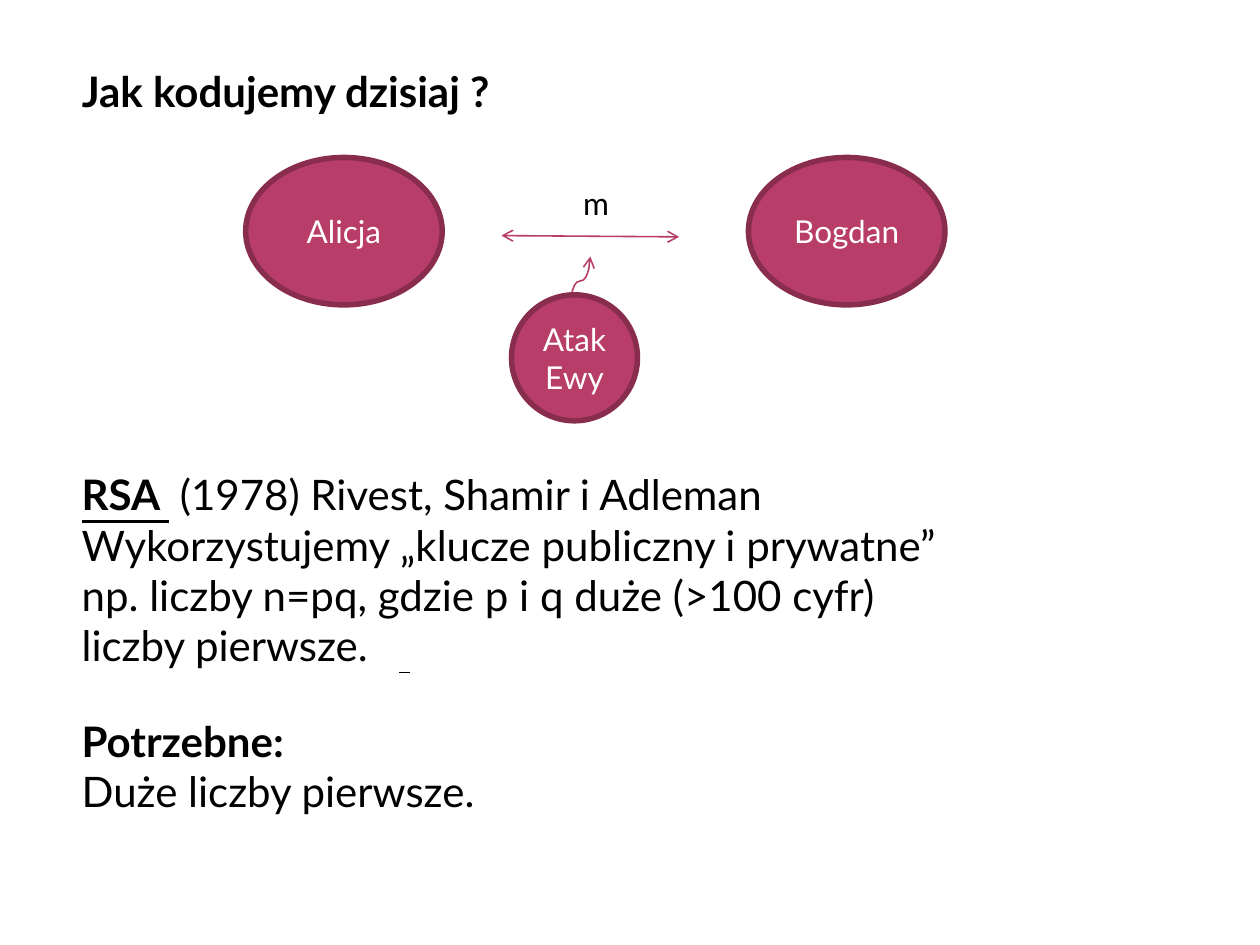
from lxml.etree import SubElement
from pptx import Presentation
from pptx.dml.color import RGBColor
from pptx.enum.shapes import MSO_CONNECTOR, MSO_SHAPE
from pptx.enum.text import MSO_ANCHOR, PP_ALIGN
from pptx.oxml.ns import qn
from pptx.util import Inches, Pt

FONT = "Lato"
BLACK, WHITE = "000000", "FFFFFF"
PINK, DARK_PINK = "B83D68", "882D4D"
LEFT = 0.55


def rgb(value):
    return RGBColor.from_string(value)


def add_run(p, text, size, color=BLACK, bold=False, underline=False):
    r = p.add_run()
    r.text = text
    r.font.name = FONT
    r.font.size = Pt(size)
    r.font.bold = bold
    r.font.underline = underline
    r.font.color.rgb = rgb(color)


def add_tab_stop(p, position):
    tabs = SubElement(p._p.get_or_add_pPr(), qn("a:tabLst"))
    SubElement(tabs, qn("a:tab"), pos=str(Inches(position)), algn="l")


def add_text(s, x, y, w, h, wrap=True):
    tf = s.shapes.add_textbox(Inches(x), Inches(y), Inches(w), Inches(h)).text_frame
    tf.word_wrap = wrap
    return tf


def set_title(s, text):
    sp = s.shapes.title
    sp.left, sp.top = Inches(LEFT), Inches(0.47)
    sp.width, sp.height = Inches(3.83), Inches(0.5)
    tf = sp.text_frame
    tf.vertical_anchor = MSO_ANCHOR.TOP
    p = tf.paragraphs[0]
    p.alignment = PP_ALIGN.LEFT
    add_run(p, text, 24, bold=True)


def add_person(s, name, x, y, w, h):
    sp = s.shapes.add_shape(MSO_SHAPE.OVAL, Inches(x), Inches(y), Inches(w), Inches(h))
    sp.shadow.inherit = False
    sp.fill.solid()
    sp.fill.fore_color.rgb = rgb(PINK)
    sp.line.color.rgb = rgb(DARK_PINK)
    sp.line.width = Pt(3.15)
    tf = sp.text_frame
    tf.word_wrap = True
    tf.vertical_anchor = MSO_ANCHOR.MIDDLE
    p = tf.paragraphs[0]
    p.alignment = PP_ALIGN.CENTER
    add_run(p, name, 18, WHITE)


def add_double_arrow(s, kind, x1, y1, x2, y2):
    line = s.shapes.add_connector(kind, Inches(x1), Inches(y1), Inches(x2), Inches(y2))
    line.line.color.rgb = rgb(PINK)
    line.line.width = Pt(0.9)
    ln = line.line._get_or_add_ln()
    for end in ("a:headEnd", "a:tailEnd"):
        SubElement(ln, qn(end), type="arrow")
    SubElement(line._element.spPr, qn("a:effectLst"))
    return line


def main():
    prs = Presentation()
    prs.slide_width, prs.slide_height = Inches(10), Inches(7.5)
    s = prs.slides.add_slide(prs.slide_layouts[5])
    set_title(s, "Jak kodujemy dzisiaj ?")

    # Message between Alicja and Bogdan
    for name, x in (("Alicja", 1.95), ("Bogdan", 5.94)):
        add_person(s, name, x, 1.25, 1.56, 1.17)
    add_double_arrow(s, MSO_CONNECTOR.STRAIGHT, 3.98, 1.87, 5.39, 1.88)
    add_run(add_text(s, 4.53, 1.41, 0.86, 0.4).paragraphs[0], "m", 18)

    # Attack: the curve is turned a quarter so that it runs vertically
    curve = add_double_arrow(s, MSO_CONNECTOR.CURVE, 4.41, 2.15, 4.8, 2.31)
    curve._element.spPr.find(qn("a:xfrm")).set("rot", str(90 * 60000))
    add_person(s, "Atak Ewy", 4.06, 2.34, 1, 1)

    # RSA description
    tf = add_text(s, LEFT, 3.67, 7.89, 1.72)
    p = tf.paragraphs[0]
    add_run(p, "RSA ", 24, bold=True, underline=True)
    add_run(p, " (1978) Rivest, Shamir i Adleman", 24)
    for text in ("Wykorzystujemy „klucze publiczny i prywatne”",
                 "np. liczby n=pq, gdzie p i q duże (>100 cyfr)"):
        add_run(tf.add_paragraph(), text, 24)
    p = tf.add_paragraph()
    add_tab_stop(p, 2.52)
    add_run(p, "liczby pierwsze.\t", 24)
    add_run(p, " ", 24, underline=True)

    # Requirements
    tf = add_text(s, LEFT, 5.63, 3.78, 0.91, wrap=False)
    add_run(tf.paragraphs[0], "Potrzebne:", 24, bold=True)
    add_run(tf.add_paragraph(), "Duże liczby pierwsze.", 24)

    prs.save("out.pptx")


if __name__ == "__main__":
    main()
